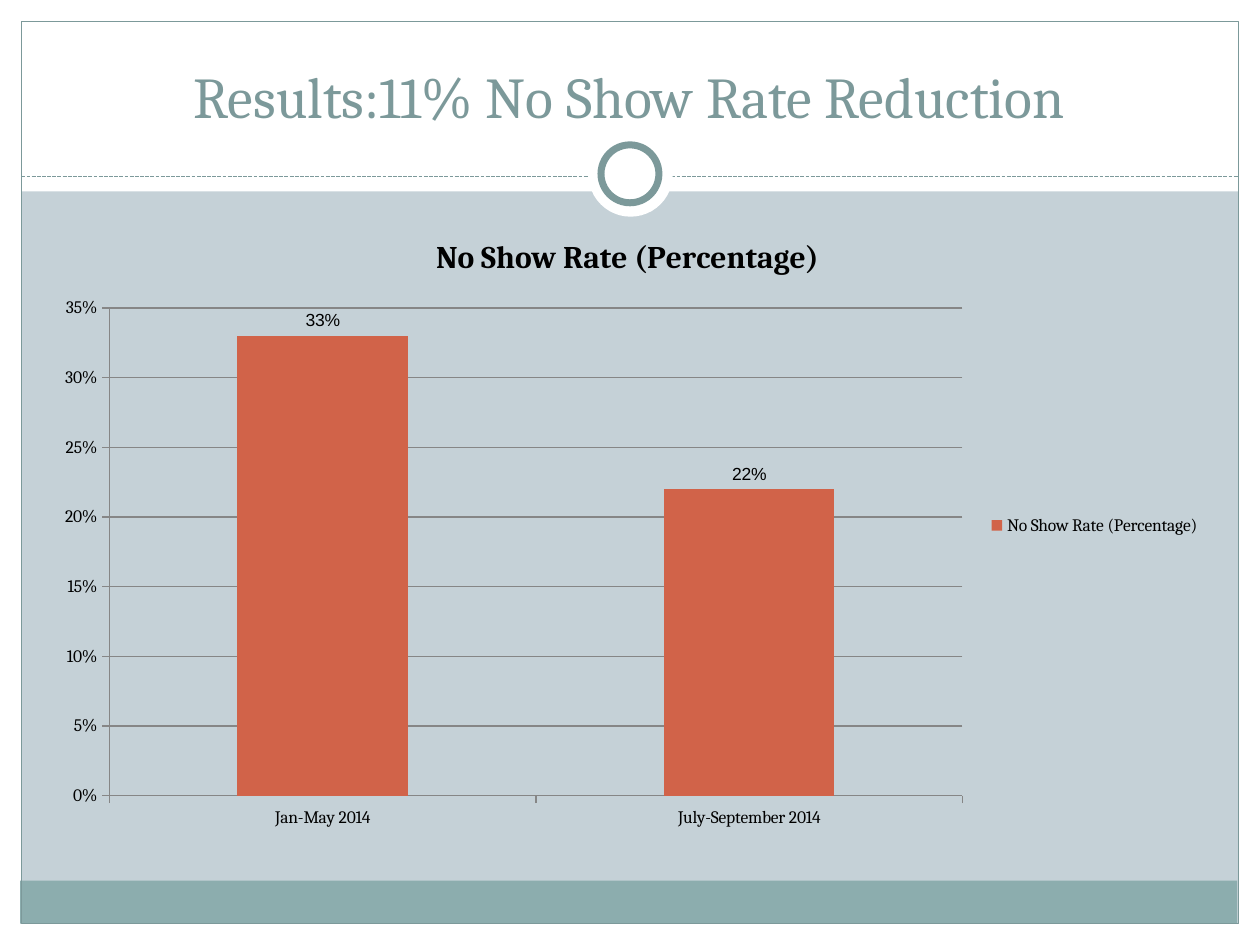
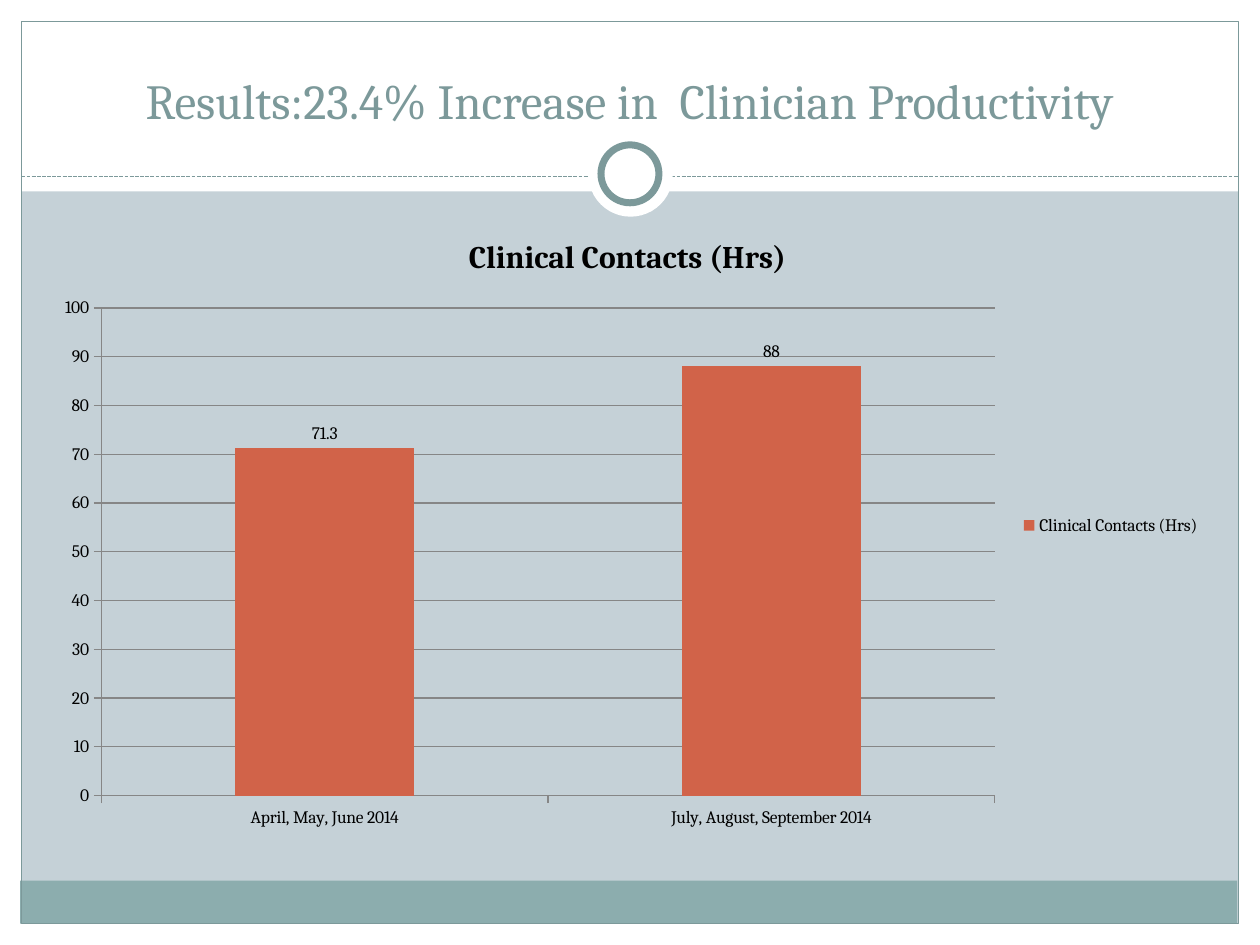
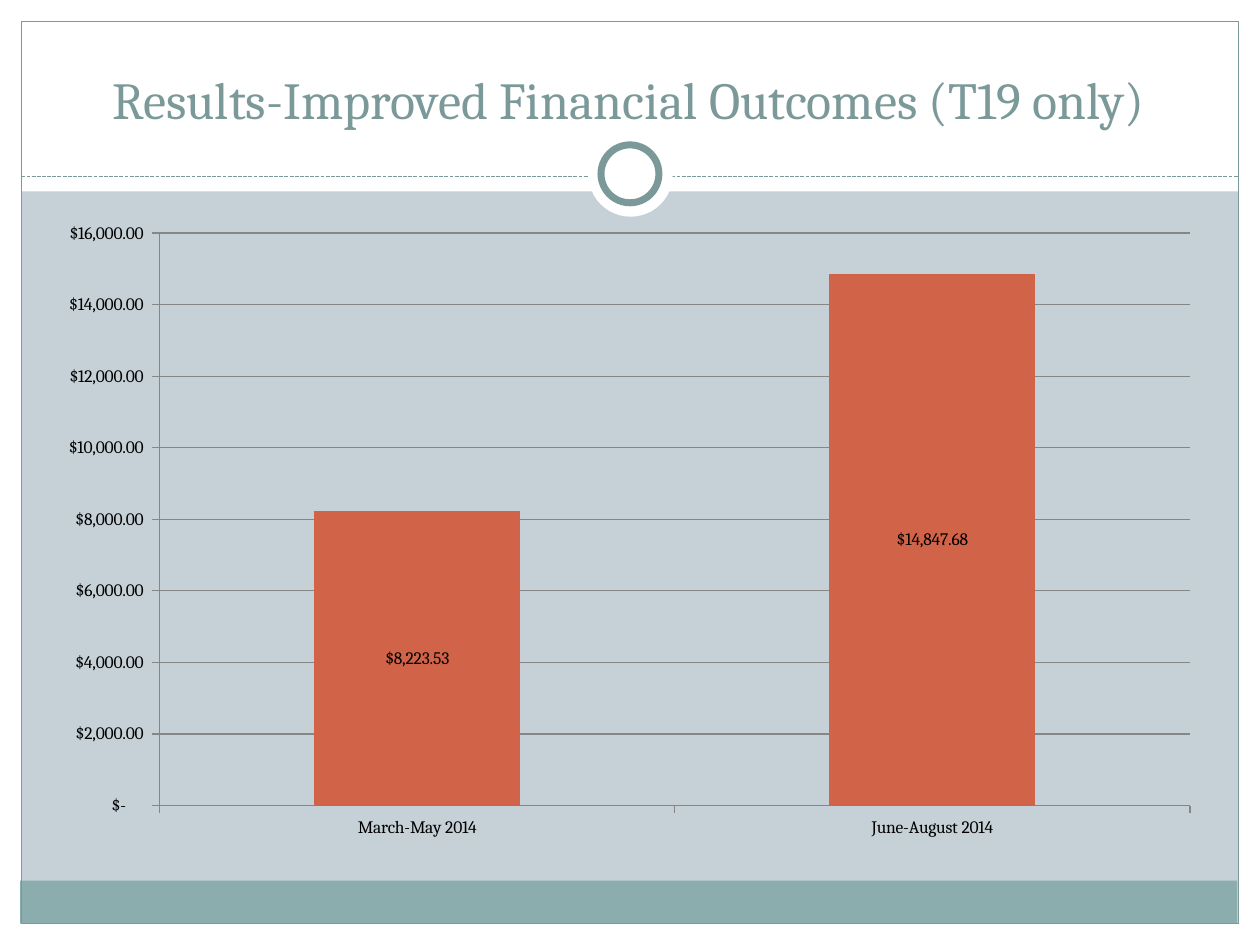
from dataclasses import dataclass
from typing import Optional

from lxml.etree import SubElement
from pptx import Presentation
from pptx.chart.data import CategoryChartData
from pptx.dml.color import RGBColor
from pptx.enum.chart import XL_CHART_TYPE as ChartType
from pptx.enum.chart import XL_LABEL_POSITION as LabelPosition
from pptx.enum.chart import XL_LEGEND_POSITION as LegendPosition
from pptx.enum.chart import XL_TICK_MARK as TickMark
from pptx.enum.dml import MSO_LINE_DASH_STYLE as Dash
from pptx.enum.shapes import MSO_CONNECTOR as Connector
from pptx.enum.shapes import MSO_SHAPE as Preset
from pptx.enum.text import MSO_ANCHOR as Anchor
from pptx.enum.text import PP_ALIGN as Align
from pptx.oxml.ns import qn
from pptx.util import Inches, Pt

BACKGROUND = RGBColor(0xC5, 0xD1, 0xD7)
WHITE = RGBColor(0xFF, 0xFF, 0xFF)
BLACK = RGBColor(0x00, 0x00, 0x00)
TEAL = RGBColor(0x7C, 0x99, 0x9A)
FOOTER_TEAL = RGBColor(0x8C, 0xAD, 0xAE)
BAR_RED = RGBColor(0xD1, 0x63, 0x49)
GRID_GRAY = RGBColor(0x86, 0x86, 0x86)

FONT = "Cambria"
DOLLARS = r'_("$"* #,##0.00_);_("$"* \(#,##0.00\);_("$"* "-"??_);_(@_)'


@dataclass(frozen=True)
class Decoration:
    left: float
    top: float
    width: float
    height: float
    fill: Optional[RGBColor] = WHITE
    outline: Optional[float] = None
    preset: Preset = Preset.RECTANGLE


@dataclass(frozen=True)
class Result:
    title: str
    title_size: float
    series: str
    values: dict[str, float]
    axis_max: float
    axis_step: float
    number_format: str = "General"
    stacked: bool = False
    chart_height: float = 5
    label_font: str = FONT


FRAME = [
    Decoration(0, 7.33, 10, 0.17),
    Decoration(0, 0, 10, 1.52),
    Decoration(0, 0, 0.17, 7.5),
    Decoration(9.83, 0, 0.17, 7.5),
    Decoration(0.16, 6.99, 9.66, 0.34, FOOTER_TEAL),
    Decoration(0.17, 0.17, 9.66, 7.16, None, 0.75),
]
RING = [
    Decoration(4.67, 1.05, 0.67, 0.67, preset=Preset.OVAL),
    Decoration(4.77, 1.15, 0.46, 0.46, outline=4, preset=Preset.OVAL),
]

RESULTS = [
    Result("Results:11% No Show Rate Reduction", 33, "No Show Rate (Percentage)",
           {"Jan-May 2014": 0.33, "July-September 2014": 0.22},
           0.35, 0.05, "0%", label_font="Arial"),
    Result("Results:23.4% Increase in  Clinician Productivity", 28,
           "Clinical Contacts (Hrs)",
           {"April, May, June 2014": 71.3, "July, August, September 2014": 88},
           100, 10),
    Result("Results-Improved Financial Outcomes (T19 only)", 29.7, "Series 1",
           {"March-May 2014": 8223.53, "June-August 2014": 14847.68},
           16000, 2000, DOLLARS, stacked=True, chart_height=5.08),
]


def add_decoration(slide, item: Decoration) -> None:
    shape = slide.shapes.add_shape(item.preset, Inches(item.left), Inches(item.top),
                                   Inches(item.width), Inches(item.height))
    shape.shadow.inherit = False
    if item.fill is None:
        shape.fill.background()
    else:
        shape.fill.solid()
        shape.fill.fore_color.rgb = item.fill
    if item.outline is None:
        shape.line.fill.background()
    else:
        shape.line.color.rgb = TEAL
        shape.line.width = Pt(item.outline)


def add_divider(slide) -> None:
    divider = slide.shapes.add_connector(Connector.STRAIGHT, Inches(0.17), Inches(1.4),
                                         Inches(9.83), Inches(1.4))
    divider.line.color.rgb = TEAL
    divider.line.width = Pt(0.75)
    divider.line.dash_style = Dash.SQUARE_DOT
    SubElement(divider._element.spPr, qn("a:effectLst"))


def add_background(slide) -> None:
    slide.background.fill.solid()
    slide.background.fill.fore_color.rgb = BACKGROUND
    for item in FRAME:
        add_decoration(slide, item)
    add_divider(slide)
    for item in RING:
        add_decoration(slide, item)


def style_font(font, size: float, color: RGBColor, name: str = FONT) -> None:
    font.name = name
    font.size = Pt(size)
    font.color.rgb = color


def add_title(slide, result: Result) -> None:
    frame = slide.shapes.add_textbox(Inches(0.33), Inches(0.25),
                                     Inches(9.33), Inches(0.83)).text_frame
    frame.word_wrap = True
    frame.vertical_anchor = Anchor.BOTTOM
    frame.text = result.title
    heading = frame.paragraphs[0]
    heading.alignment = Align.CENTER
    style_font(heading.runs[0].font, result.title_size, TEAL)


def style_axes(chart, result: Result) -> None:
    for axis in (chart.category_axis, chart.value_axis):
        axis.major_tick_mark = TickMark.OUTSIDE
        axis.minor_tick_mark = TickMark.NONE
        axis.format.line.color.rgb = GRID_GRAY
    scale = chart.value_axis
    scale.minimum_scale = 0
    scale.maximum_scale = result.axis_max
    scale.major_unit = result.axis_step
    scale.has_major_gridlines = True
    scale.major_gridlines.format.line.color.rgb = GRID_GRAY
    scale.tick_labels.number_format = result.number_format
    scale.tick_labels.number_format_is_linked = False


def style_bars(chart, result: Result) -> None:
    plot = chart.plots[0]
    plot.vary_by_categories = False
    plot.gap_width = 150
    plot.overlap = 100 if result.stacked else 0
    bars = plot.series[0]
    bars.format.fill.solid()
    bars.format.fill.fore_color.rgb = BAR_RED
    labels = bars.data_labels
    labels.show_value = True
    labels.number_format = result.number_format
    labels.number_format_is_linked = False
    labels.position = LabelPosition.CENTER if result.stacked else LabelPosition.OUTSIDE_END
    style_font(labels.font, 10, BLACK, result.label_font)


def add_chart_heading(chart, result: Result) -> None:
    """Add the series name as chart title, with a legend on the right."""
    chart.has_title = True
    frame = chart.chart_title.text_frame
    frame.text = result.series
    font = frame.paragraphs[0].runs[0].font
    style_font(font, 18, BLACK)
    font.bold = True
    chart.chart_title.include_in_layout = False
    chart.has_legend = True
    chart.legend.position = LegendPosition.RIGHT
    chart.legend.include_in_layout = False


def add_result_chart(slide, result: Result) -> None:
    data = CategoryChartData(number_format=result.number_format)
    data.categories = list(result.values)
    data.add_series(result.series, list(result.values.values()))
    kind = ChartType.COLUMN_STACKED if result.stacked else ChartType.COLUMN_CLUSTERED
    chart = slide.shapes.add_chart(kind, Inches(0.33), Inches(1.67), Inches(9.3),
                                   Inches(result.chart_height), data).chart
    style_font(chart.font, 10, BLACK)
    style_axes(chart, result)
    style_bars(chart, result)
    if result.stacked:
        chart.has_title = False
        chart.has_legend = False
    else:
        add_chart_heading(chart, result)


def main() -> None:
    deck = Presentation()
    deck.slide_width = Inches(10)
    deck.slide_height = Inches(7.5)
    blank = deck.slide_layouts[6]
    for result in RESULTS:
        slide = deck.slides.add_slide(blank)
        add_background(slide)
        add_title(slide, result)
        add_result_chart(slide, result)
    deck.save("out.pptx")


if __name__ == "__main__":
    main()
